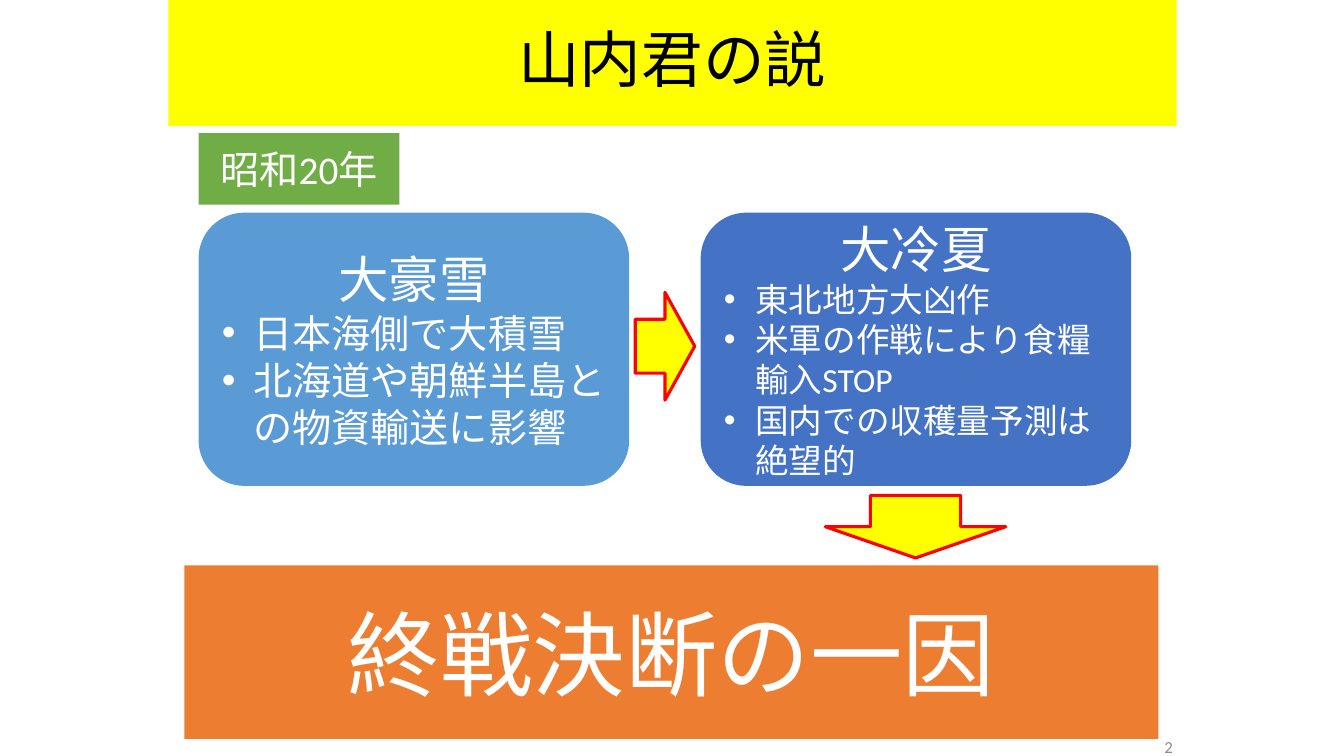
"""Builds a slide that traces a heavy snow and a cold summer to the end of a war."""
import pptx
import pptx.dml.color
import pptx.enum.shapes
import pptx.enum.text
import pptx.oxml.ns
import pptx.util
from lxml import etree

SHAPE = pptx.enum.shapes.MSO_SHAPE
ALIGN = pptx.enum.text.PP_ALIGN
EMU_PER_PX = 9144
COLOURS = {
    "black": "000000",
    "white": "FFFFFF",
    "grey": "8C8C8C",
    "yellow": "FFFF00",
    "red": "FF0000",
    "green": "70AD47",
    "sky": "5B9BD5",
    "blue": "4472C4",
    "orange": "ED7D31",
}


def px(length):
    return pptx.util.Emu(length * EMU_PER_PX)


def colour(name):
    return pptx.dml.color.RGBColor.from_string(COLOURS[name])


def set_format(target, values):
    for name, value in values.items():
        setattr(target, name, value)


class SlideBuilder:
    font_name = "Calibri"
    bullet_indent = 31
    frame_format = {
        "word_wrap": True,
        "vertical_anchor": pptx.enum.text.MSO_ANCHOR.MIDDLE,
    }

    def __init__(self, page):
        self.page = page

    def shape(self, kind, bounds, fill, line=None):
        box = self.page.shapes.add_shape(kind, *map(px, bounds))
        box.shadow.inherit = False
        box.fill.solid()
        box.fill.fore_color.rgb = colour(fill)
        if line:
            box.line.color.rgb = colour(line)
            box.line.width = pptx.util.Pt(2.25)
        else:
            box.line.fill.background()
        return box

    def label(self, para, text, size, ink="white", **para_format):
        set_format(para, para_format)
        span = para.add_run()
        span.text = text
        set_format(span.font, {"name": self.font_name, "size": pptx.util.Pt(size)})
        span.font.color.rgb = colour(ink)

    def bullet(self, para):
        properties = para._p.get_or_add_pPr()
        indent = px(self.bullet_indent)
        properties.set("marL", str(indent))
        properties.set("indent", str(-indent))
        for tag, name, value in (("a:buFont", "typeface", "Arial"), ("a:buChar", "char", "•")):
            element = etree.SubElement(properties, pptx.oxml.ns.qn(tag))
            element.set(name, value)

    def banner(self, bounds, fill, text, size, ink="white", **para_format):
        frame = self.shape(SHAPE.RECTANGLE, bounds, fill).text_frame
        set_format(frame, self.frame_format)
        self.label(frame.paragraphs[0], text, size, ink, alignment=ALIGN.CENTER, **para_format)

    def card(self, bounds, fill, heading, points, size):
        frame = self.shape(SHAPE.ROUNDED_RECTANGLE, bounds, fill).text_frame
        set_format(frame, self.frame_format)
        self.label(frame.paragraphs[0], heading, 36, alignment=ALIGN.CENTER)
        for point in points:
            para = frame.add_paragraph()
            self.bullet(para)
            self.label(para, point, size, alignment=ALIGN.LEFT)

    def arrow(self, bounds, rotation=0):
        self.shape(SHAPE.RIGHT_ARROW, bounds, "yellow", "red").rotation = rotation

    def page_number(self, bounds, text):
        frame = self.page.shapes.add_textbox(*map(px, bounds)).text_frame
        set_format(frame, self.frame_format)
        self.label(frame.paragraphs[0], text, 12, "grey", alignment=ALIGN.RIGHT)


def main():
    deck = pptx.Presentation()
    set_format(deck, {"slide_width": px(1333), "slide_height": px(750)})
    builder = SlideBuilder(deck.slides.add_slide(deck.slide_layouts[6]))

    builder.banner((167, 0, 1000, 125), "yellow", "山内君の説", 44, "black", line_spacing=0.9)
    builder.page_number((948, 721, 225, 40), "2")
    builder.card((197, 211, 427, 271), "sky", "大豪雪",
                 ("日本海側で大積雪", "北海道や朝鮮半島との物資輸送に影響"), 28)
    builder.card((695, 211, 427, 271), "blue", "大冷夏",
                 ("東北地方大凶作", "米軍の作戦により食糧輸入STOP", "国内での収穫量予測は絶望的"), 24)
    builder.banner((183, 561, 966, 172), "orange", "終戦決断の一因", 66)
    builder.arrow((630, 290, 59, 107))
    builder.arrow((877, 433, 62, 179), rotation=90)
    builder.banner((197, 132, 199, 71), "green", "昭和20年", 28)

    deck.save("out.pptx")


if __name__ == "__main__":
    main()
